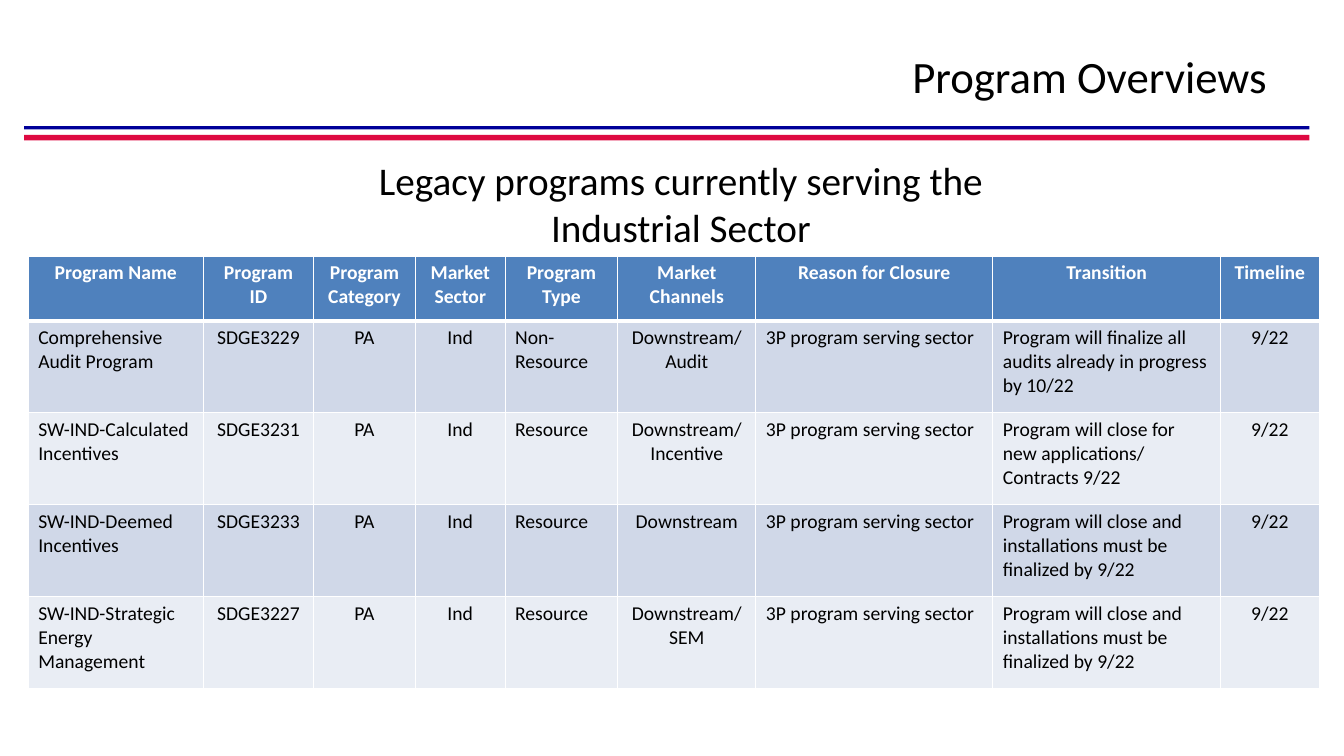
from lxml.etree import SubElement
from pptx import Presentation
from pptx.dml.color import RGBColor
from pptx.enum.shapes import MSO_SHAPE
from pptx.enum.text import MSO_ANCHOR, PP_ALIGN
from pptx.oxml.ns import qn
from pptx.util import Cm, Pt

BLACK = RGBColor(0x00, 0x00, 0x00)
WHITE = RGBColor(0xFF, 0xFF, 0xFF)
RED = RGBColor(0xDE, 0x0A, 0x42)
NAVY = RGBColor(0x00, 0x00, 0x99)
HEADER_BLUE = RGBColor(0x4F, 0x81, 0xBD)
BANDS = (RGBColor(0xD0, 0xD8, 0xE8), RGBColor(0xE9, 0xED, 0xF4))

COLUMNS = (
    ("Program Name", 4.42, PP_ALIGN.LEFT),
    ("Program ID", 2.77, PP_ALIGN.CENTER),
    ("Program Category", 2.57, PP_ALIGN.CENTER),
    ("Market Sector", 2.26, PP_ALIGN.CENTER),
    ("Program Type", 2.84, PP_ALIGN.LEFT),
    ("Market Channels", 3.48, PP_ALIGN.CENTER),
    ("Reason for Closure", 5.97, PP_ALIGN.LEFT),
    ("Transition", 5.74, PP_ALIGN.LEFT),
    ("Timeline", 2.49, PP_ALIGN.CENTER),
)
CLOSE_AND_INSTALL = "Program will close and installations must be finalized by 9/22"
PROGRAMS = (
    ("Comprehensive Audit Program", "SDGE3229", "Non-Resource", "Downstream/ Audit",
     "Program will finalize all audits already in progress by 10/22"),
    ("SW-IND-Calculated Incentives", "SDGE3231", "Resource", "Downstream/ Incentive",
     "Program will close for new applications/ Contracts 9/22"),
    ("SW-IND-Deemed Incentives", "SDGE3233", "Resource", "Downstream",
     CLOSE_AND_INSTALL),
    ("SW-IND-Strategic Energy Management", "SDGE3227", "Resource", "Downstream/ SEM",
     CLOSE_AND_INSTALL),
)


class SlideBuilder:
    """Adds styled elements to one slide."""

    font = "Calibri"

    def __init__(self, slide):
        self.slide = slide

    def set_text(self, tf, text, size, color, align, bold=False):
        p = tf.paragraphs[0]
        p.text = text
        p.alignment = align
        p.font.name = self.font
        p.font.size = Pt(size)
        p.font.bold = bold
        p.font.color.rgb = color

    def bar(self, top, height, color):
        sp = self.slide.shapes.add_shape(
            MSO_SHAPE.RECTANGLE, Cm(0.61), Cm(top), Cm(32.39), Cm(height))
        sp.shadow.inherit = False
        sp.fill.solid()
        sp.fill.fore_color.rgb = color
        sp.line.fill.background()

    def text(self, left, top, width, height, text, size, align, anchor):
        tf = self.slide.shapes.add_textbox(
            Cm(left), Cm(top), Cm(width), Cm(height)).text_frame
        tf.word_wrap = True
        tf.vertical_anchor = anchor
        self.set_text(tf, text, size, BLACK, align)

    def cell(self, cell, text, fill, color, align, bold=False, bottom=1):
        self.set_text(cell.text_frame, text, 14, color, align, bold)
        tc_pr = cell._tc.get_or_add_tcPr()
        for side, width in (("L", 1), ("R", 1), ("T", 1), ("B", bottom)):
            ln = SubElement(tc_pr, qn(f"a:ln{side}"), w=str(Pt(width)))
            SubElement(SubElement(ln, qn("a:solidFill")), qn("a:srgbClr"), val=str(WHITE))
        cell.fill.solid()
        cell.fill.fore_color.rgb = fill

    def table(self, left, top, columns, rows, header_height, row_height):
        width = sum(w for _, w, _ in columns)
        height = header_height + row_height * len(rows)
        table = self.slide.shapes.add_table(
            len(rows) + 1, len(columns), Cm(left), Cm(top), Cm(width), Cm(height)).table
        for i, row in enumerate(table.rows):
            row.height = Cm(row_height if i else header_height)
        for c, (heading, col_width, align) in enumerate(columns):
            table.columns[c].width = Cm(col_width)
            self.cell(table.cell(0, c), heading, HEADER_BLUE, WHITE,
                      PP_ALIGN.CENTER, bold=True, bottom=3)
            for r, values in enumerate(rows):
                self.cell(table.cell(r + 1, c), values[c], BANDS[r % 2], BLACK, align)


def main():
    prs = Presentation()
    prs.slide_width, prs.slide_height = Cm(33.87), Cm(19.05)
    s = SlideBuilder(prs.slides.add_slide(prs.slide_layouts[6]))
    s.bar(3.4, 0.14, RED)
    s.bar(3.18, 0.08, NAVY)
    s.text(7.62, 0.76, 24.56, 2.31, "Program Overviews", 32,
           PP_ALIGN.RIGHT, MSO_ANCHOR.MIDDLE)
    rows = [(name, number, "PA", "Ind", kind, channel,
             "3P program serving sector", transition, "9/22")
            for name, number, kind, channel, transition in PROGRAMS]
    s.table(0.71, 6.45, COLUMNS, rows, 1.63, 2.32)
    s.text(9.02, 3.81, 16.28, 2.64,
           "Legacy programs currently serving the Industrial Sector", 28,
           PP_ALIGN.CENTER, MSO_ANCHOR.TOP)
    prs.save("out.pptx")


if __name__ == "__main__":
    main()
